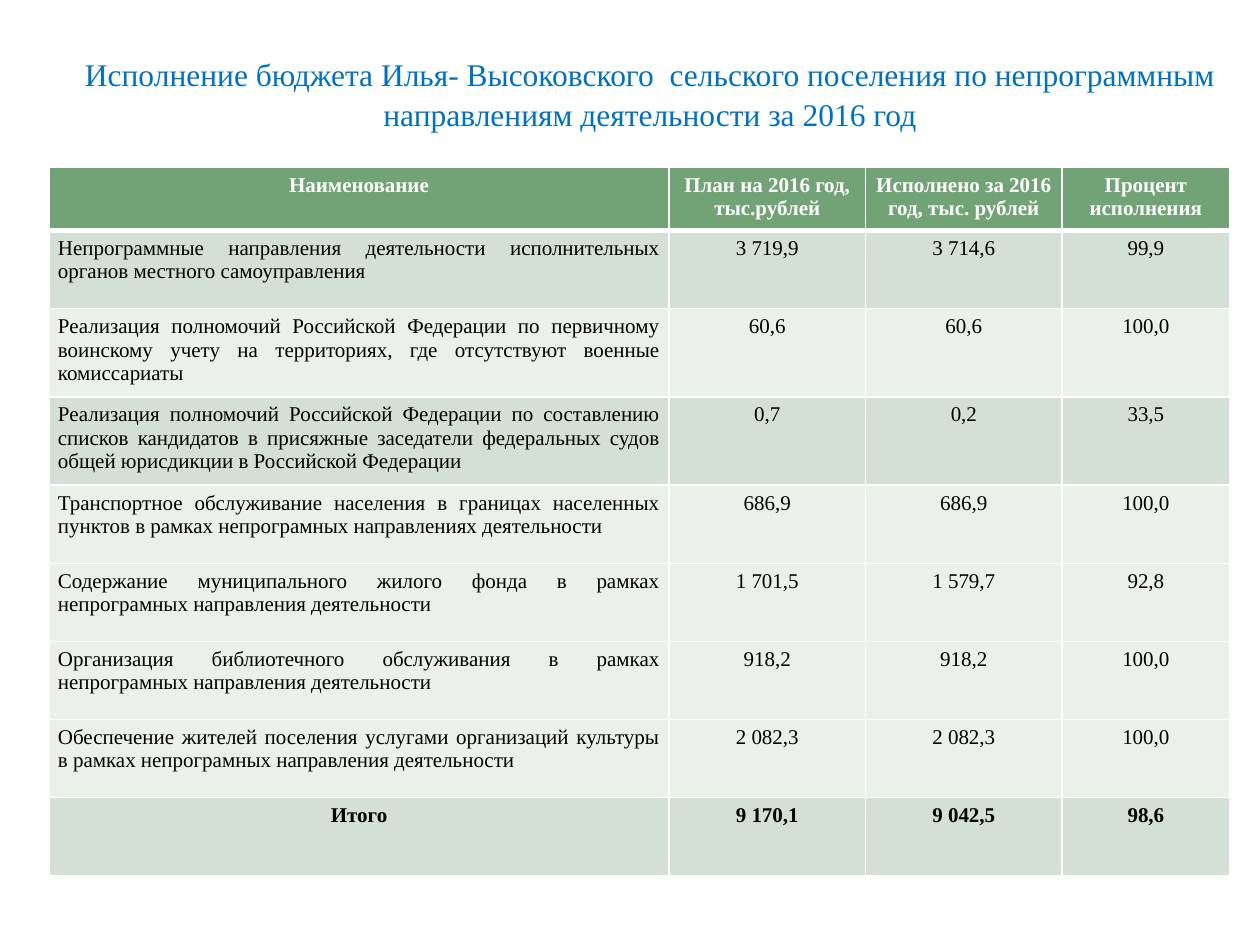
from dataclasses import dataclass

from lxml import etree
from pptx import Presentation
from pptx.dml.color import RGBColor
from pptx.enum.text import MSO_ANCHOR, PP_ALIGN
from pptx.oxml.ns import qn
from pptx.util import Inches, Pt

CENTER = PP_ALIGN.CENTER
JUSTIFY = PP_ALIGN.JUSTIFY
MIDDLE = MSO_ANCHOR.MIDDLE
BLANK_LAYOUT = 6


@dataclass(frozen=True)
class Theme:
    """Colours, type sizes and line widths of the slide."""

    font: str = "Times New Roman"
    title_size: int = 18
    table_size: int = 12
    title: str = "0070C0"
    header: str = "72A376"
    dark_band: str = "D5E0D5"
    light_band: str = "EBF0EB"
    white: str = "FFFFFF"
    black: str = "000000"
    thin: float = 0.96
    thick: float = 3


THEME = Theme()
SLIDE_WIDTH, SLIDE_HEIGHT = Inches(10), Inches(7.5)
GRID_COLUMNS, GRID_ROWS = 100, 75
COLUMN_SPANS = [49.2, 15.6, 15.6, 13.3]
HEADER_SPAN, BODY_SPAN = 4.5, 6.2

TITLE = (
    "Исполнение бюджета Илья- Высоковского  сельского поселения "
    "по непрограммным направлениям деятельности за 2016 год"
)
HEADINGS = [
    "Наименование",
    "План на 2016 год,\nтыс.рублей",
    "Исполнено за 2016 год, тыс. рублей",
    "Процент исполнения",
]
DARK, LIGHT = THEME.dark_band, THEME.light_band
EXPENSES = [
    (DARK, "Непрограммные направления деятельности исполнительных органов "
     "местного самоуправления", "3 719,9", "3 714,6", "99,9"),
    (LIGHT, "Реализация полномочий Российской Федерации по первичному воинскому "
     "учету на территориях, где отсутствуют военные комиссариаты",
     "60,6", "60,6", "100,0"),
    (DARK, "Реализация полномочий Российской Федерации по составлению списков "
     "кандидатов в присяжные заседатели федеральных судов общей юрисдикции "
     "в Российской Федерации", "0,7", "0,2", "33,5"),
    (LIGHT, "Транспортное обслуживание населения в границах населенных пунктов "
     "в рамках непрограмных направлениях деятельности",
     "686,9", "686,9", "100,0"),
    (LIGHT, "Содержание муниципального жилого фонда в рамках непрограмных "
     "направления деятельности", "1 701,5", "1 579,7", "92,8"),
    (LIGHT, "Организация библиотечного обслуживания в рамках непрограмных "
     "направления деятельности", "918,2", "918,2", "100,0"),
    (LIGHT, "Обеспечение жителей поселения услугами организаций культуры "
     "в рамках непрограмных направления деятельности",
     "2 082,3", "2 082,3", "100,0"),
]
TOTAL = ["Итого", "9 170,1", "9 042,5", "98,6"]


def across(columns):
    """Return the width of a number of grid columns."""
    return round(SLIDE_WIDTH * columns / GRID_COLUMNS)


def down(rows):
    """Return the height of a number of grid rows."""
    return round(SLIDE_HEIGHT * rows / GRID_ROWS)


def write(frame, text, size, color, bold=False, align=CENTER):
    """Fill a text frame with one paragraph per line of text."""
    for index, line in enumerate(text.split("\n")):
        para = frame.add_paragraph() if index else frame.paragraphs[0]
        para.alignment = align
        span = para.add_run()
        span.text = line
        span.font.name = THEME.font
        span.font.size = Pt(size)
        span.font.bold = bold
        span.font.color.rgb = RGBColor.from_string(color)


def add_title(page):
    """Place the slide title."""
    box = page.shapes.add_textbox(across(5.5), down(3.9), across(92.2), down(7))
    frame = box.text_frame
    frame.word_wrap = True
    frame.vertical_anchor = MIDDLE
    write(frame, TITLE, THEME.title_size, THEME.title)
    frame.paragraphs[0].line_spacing = 1.05


def set_borders(cell, top, bottom):
    """Give a cell white borders with the given top and bottom widths."""
    properties = cell._tc.get_or_add_tcPr()
    widths = {"lnL": THEME.thin, "lnR": THEME.thin, "lnT": top, "lnB": bottom}
    for side, width in widths.items():
        line = etree.SubElement(properties, qn(f"a:{side}"), w=str(Pt(width)))
        fill = etree.SubElement(line, qn("a:solidFill"))
        etree.SubElement(fill, qn("a:srgbClr"), val=THEME.white)


def fill_row(table, index, texts, band, color=THEME.black, bold=False,
             first_align=CENTER):
    """Write and style one table row."""
    top = THEME.thick if index == 1 else THEME.thin
    bottom = THEME.thick if index == 0 else THEME.thin
    for column, text in enumerate(texts):
        cell = table.cell(index, column)
        cell.margin_left = cell.margin_right = Inches(0.07)
        cell.margin_top = cell.margin_bottom = Inches(0.05)
        set_borders(cell, top, bottom)
        cell.fill.solid()
        cell.fill.fore_color.rgb = RGBColor.from_string(band)
        align = CENTER if column else first_align
        write(cell.text_frame, text, THEME.table_size, color, bold, align)


def add_budget_table(page):
    """Place the table of planned and actual spending."""
    heights = [HEADER_SPAN] + [BODY_SPAN] * (len(EXPENSES) + 1)
    table = page.shapes.add_table(
        len(heights), len(COLUMN_SPANS), across(3.9), down(13.3),
        across(sum(COLUMN_SPANS)), down(sum(heights)),
    ).table
    table.horz_banding = False
    for column, span in zip(table.columns, COLUMN_SPANS):
        column.width = across(span)
    for row, span in zip(table.rows, heights):
        row.height = down(span)
    fill_row(table, 0, HEADINGS, THEME.header, THEME.white, bold=True)
    for index, (band, *texts) in enumerate(EXPENSES, start=1):
        fill_row(table, index, texts, band, first_align=JUSTIFY)
    fill_row(table, len(heights) - 1, TOTAL, DARK, bold=True)


def main():
    """Build and save the budget slide."""
    deck = Presentation()
    deck.slide_width, deck.slide_height = SLIDE_WIDTH, SLIDE_HEIGHT
    page = deck.slides.add_slide(deck.slide_layouts[BLANK_LAYOUT])
    add_title(page)
    add_budget_table(page)
    deck.save("out.pptx")


if __name__ == "__main__":
    main()
